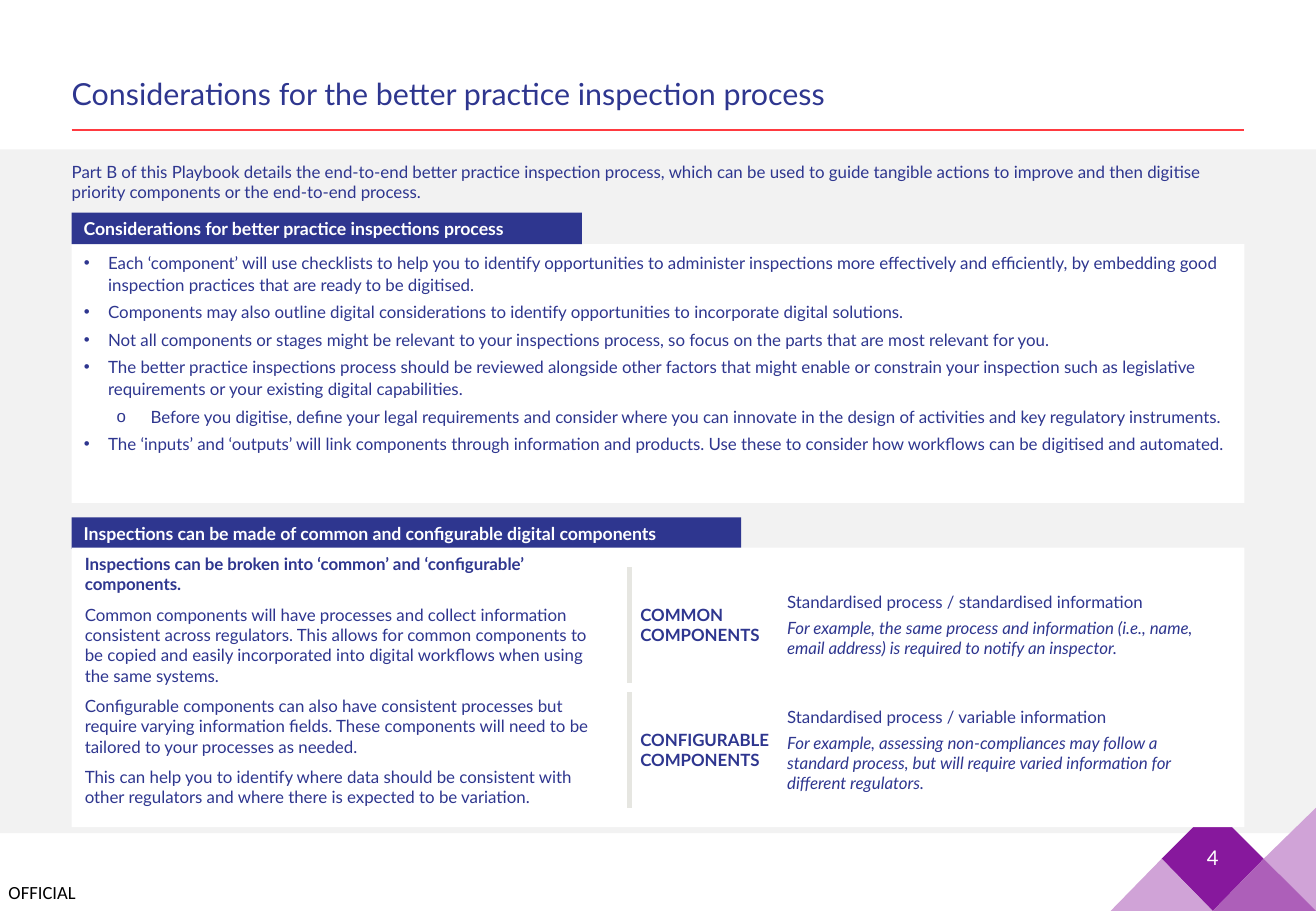
from dataclasses import dataclass
from lxml.etree import SubElement
from pptx import Presentation
from pptx.dml.color import RGBColor as Color
from pptx.enum.shapes import MSO_CONNECTOR as Connector, MSO_SHAPE as Shape
from pptx.enum.text import MSO_ANCHOR as Anchor, MSO_AUTO_SIZE as AutoSize, PP_ALIGN as Align
from pptx.oxml.ns import qn
from pptx.util import Pt

PX = 9144


@dataclass(frozen=True)
class Theme:
    navy: str = "2E368F"
    white: str = "FFFFFF"
    black: str = "000000"
    grey: str = "F2F2F2"
    divider: str = "E6E6E1"
    red: str = "FF3A40"
    purple: str = "87189D"
    mauve: str = "AD5FB9"
    lilac: str = "D0A3D7"
    font: str = "Lato"
    label_font: str = "Calibri"
    title: float = 18
    number: float = 12
    label: float = 11
    heading: float = 10.5
    body: float = 10


THEME = Theme()
NORMAL_INSETS = (10, 5, 10, 5)

INTRO = ("Part B of this Playbook details the end-to-end better practice inspection process, which can be used to "
         "guide tangible actions to improve and then digitise priority components or the end-to-end process.")
CONSIDERATIONS = [
    (0, "Each ‘component’ will use checklists to help you to identify opportunities to administer inspections more "
        "effectively and efficiently, by embedding good inspection practices that are ready to be digitised."),
    (0, "Components may also outline digital considerations to identify opportunities to incorporate digital "
        "solutions."),
    (0, "Not all components or stages might be relevant to your inspections process, so focus on the parts that are "
        "most relevant for you."),
    (0, "The better practice inspections process should be reviewed alongside other factors that might enable or "
        "constrain your inspection such as legislative requirements or your existing digital capabilities."),
    (1, "Before you digitise, define your legal requirements and consider where you can innovate in the design of "
        "activities and key regulatory instruments."),
    (0, "The ‘inputs’ and ‘outputs’ will link components through information and products. Use these to consider "
        "how workflows can be digitised and automated."),
]
EXPLANATION = [
    "Inspections can be broken into ‘common’ and ‘configurable’ components.",
    "Common components will have processes and collect information consistent across regulators. This allows for "
    "common components to be copied and easily incorporated into digital workflows when using the same systems.",
    "Configurable components can also have consistent processes but require varying information fields. These "
    "components will need to be tailored to your processes as needed.",
    "This can help you to identify where data should be consistent with other regulators and where there is "
    "expected to be variation.",
]
COMPONENTS = [
    ("COMMON COMPONENTS", 8, "Standardised process / standardised information",
     "For example, the same process and information (i.e., name, email address) is required to notify an inspector."),
    ("CONFIGURABLE COMPONENTS", 0, "Standardised process / variable information",
     "For example, assessing non-compliances may follow a standard process, but will require varied information for "
     "different regulators."),
]


def emu(*lengths):
    return [round(length * PX) for length in lengths]


def prepare(frame, insets=NORMAL_INSETS, anchor=Anchor.TOP):
    frame.word_wrap = True
    frame.auto_size = AutoSize.NONE
    frame.vertical_anchor = anchor
    frame.margin_left, frame.margin_top, frame.margin_right, frame.margin_bottom = emu(*insets)


def style(paragraph, size, color=THEME.navy, bold=False, italic=False, align=Align.LEFT, after=0, name=THEME.font):
    paragraph.alignment = align
    paragraph.space_before, paragraph.space_after = Pt(0), Pt(after)
    font = paragraph.font
    font.name, font.size, font.bold, font.italic = name, Pt(size), bold, italic
    font.color.rgb = Color.from_string(color)


def write(frame, texts):
    frame.text = "\n".join(texts)
    return frame.paragraphs


def add_panel(slide, box, color):
    shape = slide.shapes.add_shape(Shape.RECTANGLE, *emu(*box))
    shape.shadow.inherit = False
    shape.fill.solid()
    shape.fill.fore_color.rgb = Color.from_string(color)
    shape.line.fill.background()
    return shape


def add_text(slide, box, text, size, insets=NORMAL_INSETS, anchor=Anchor.TOP, **look):
    frame = slide.shapes.add_textbox(*emu(*box)).text_frame
    prepare(frame, insets, anchor)
    for paragraph in write(frame, [text]):
        style(paragraph, size, **look)


def add_line(slide, start, end, color, width):
    line = slide.shapes.add_connector(Connector.STRAIGHT, *emu(*start, *end))
    line.line.color.rgb = Color.from_string(color)
    line.line.width = Pt(width)
    SubElement(line.element.spPr, qn("a:effectLst"))


def add_heading(slide, box, text):
    frame = add_panel(slide, box, THEME.navy).text_frame
    prepare(frame, anchor=Anchor.MIDDLE)
    style(write(frame, [text])[0], THEME.heading, THEME.white, bold=True)


def add_corner(slide, box):
    left, top, width, height = box
    middle = top + height // 2
    right, bottom = left + width, top + height
    quarter, half, three = (left + width * part // 4 for part in (1, 2, 3))
    pieces = [
        (THEME.purple, [(quarter, middle), (half, top), (three, middle), (half, bottom)]),
        (THEME.lilac, [(right, top), (right, bottom), (three, middle)]),
        (THEME.lilac, [(quarter, middle), (half, bottom), (left, bottom)]),
        (THEME.mauve, [(right, bottom), (half, bottom), (three, middle)]),
    ]
    for color, points in pieces:
        builder = slide.shapes.build_freeform(*points[0], scale=PX)
        builder.add_line_segments(points[1:], close=True)
        piece = builder.convert_to_shape()
        piece.shadow.inherit = False
        piece.fill.solid()
        piece.fill.fore_color.rgb = Color.from_string(color)
        piece.line.fill.background()
    add_text(slide, (half - 24, middle - 21, 48, 40), "4", THEME.number, anchor=Anchor.MIDDLE,
             color=THEME.white, align=Align.CENTER)


def fill_title(slide, box):
    title = slide.shapes.title
    title.left, title.top, title.width, title.height = emu(*box)
    prepare(title.text_frame, (0, 5, 0, 5), Anchor.BOTTOM)
    paragraph = write(title.text_frame, ["Considerations for the better practice inspection process"])[0]
    paragraph.line_spacing = 0.9
    style(paragraph, THEME.title)


def fill_considerations(slide, box):
    left, top, width, height = box
    body = slide.placeholders[1]
    body.left, body.top, body.width, body.height = emu(left, top + 26, width, height - 26)
    body.element.getparent().append(body.element)
    body.fill.solid()
    body.fill.fore_color.rgb = Color.from_string(THEME.white)
    prepare(body.text_frame, (10, 5, 4, 5))
    paragraphs = write(body.text_frame, [text for _, text in CONSIDERATIONS])
    for paragraph, (level, _) in zip(paragraphs, CONSIDERATIONS):
        paragraph.level = level
        paragraph.line_spacing = 1.1
        margin, indent, bullet = [(20, -20, "•"), (55, -28, "o")][level]
        properties = paragraph._p.get_or_add_pPr()
        properties.set("marL", str(margin * PX))
        properties.set("indent", str(indent * PX))
        SubElement(properties, qn("a:buChar"), char=bullet)
        style(paragraph, THEME.body, after=3)
    add_heading(slide, (left, top, 420, 26), "Considerations for better practice inspections process")


def add_component(slide, box, name, right_inset, summary, example):
    left, top, width, height = box
    name_frame = add_panel(slide, (left + 1, top, 119, height), THEME.white).text_frame
    prepare(name_frame, (8, 5, right_inset, 5), Anchor.MIDDLE)
    style(write(name_frame, [name])[0], THEME.body, bold=True, after=3)
    detail_frame = add_panel(slide, (left + 120, top, width - 120, height), THEME.white).text_frame
    prepare(detail_frame, anchor=Anchor.MIDDLE)
    for paragraph, italic in zip(write(detail_frame, [summary, example]), (False, True)):
        style(paragraph, THEME.body, italic=italic, after=3)
    add_line(slide, (left, top), (left, top + height), THEME.divider, 2.5)


def add_components(slide, box):
    left, top, width, height = box
    add_heading(slide, (left, top, 551, 26), "Inspections can be made of common and configurable digital components")
    add_panel(slide, (left, top + 25, width, height - 25), THEME.white)
    frame = slide.shapes.add_textbox(*emu(left + 1, top + 25, 443, 237)).text_frame
    prepare(frame)
    for index, paragraph in enumerate(write(frame, EXPLANATION)):
        style(paragraph, THEME.body, bold=index == 0, after=6)
    for row, component in enumerate(COMPONENTS):
        add_component(slide, (left + 459, top + 41 + row * 103, 497, 95), *component)


def main():
    presentation = Presentation()
    presentation.slide_width, presentation.slide_height = emu(1083, 750)
    slide = presentation.slides.add_slide(presentation.slide_layouts[1])
    add_text(slide, (7, 725, 80, 18), "OFFICIAL", THEME.label, (0, 0, 0, 0),
             color=THEME.black, name=THEME.label_font)
    add_panel(slide, (0, 123, 1083, 563), THEME.grey)
    add_line(slide, (59, 107), (1024, 107), THEME.red, 1.25)
    add_corner(slide, (914, 665, 169, 85))
    fill_title(slide, (59, 59, 965, 38))
    fill_considerations(slide, (59, 175, 965, 239))
    add_text(slide, (59, 128, 965, 39), INTRO, THEME.body, (0, 5, 10, 5))
    add_components(slide, (59, 426, 965, 255))
    presentation.save("out.pptx")


if __name__ == "__main__":
    main()
